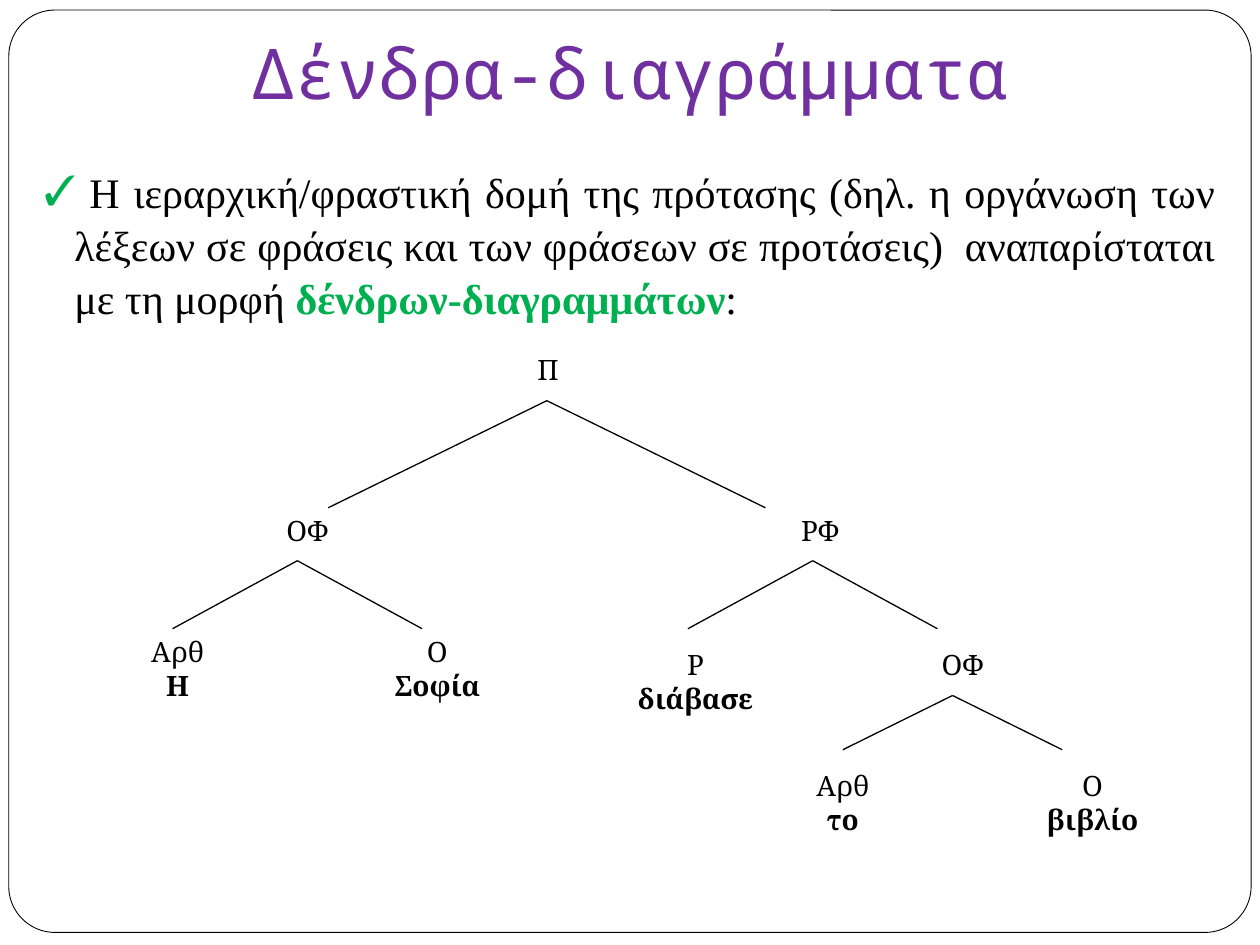
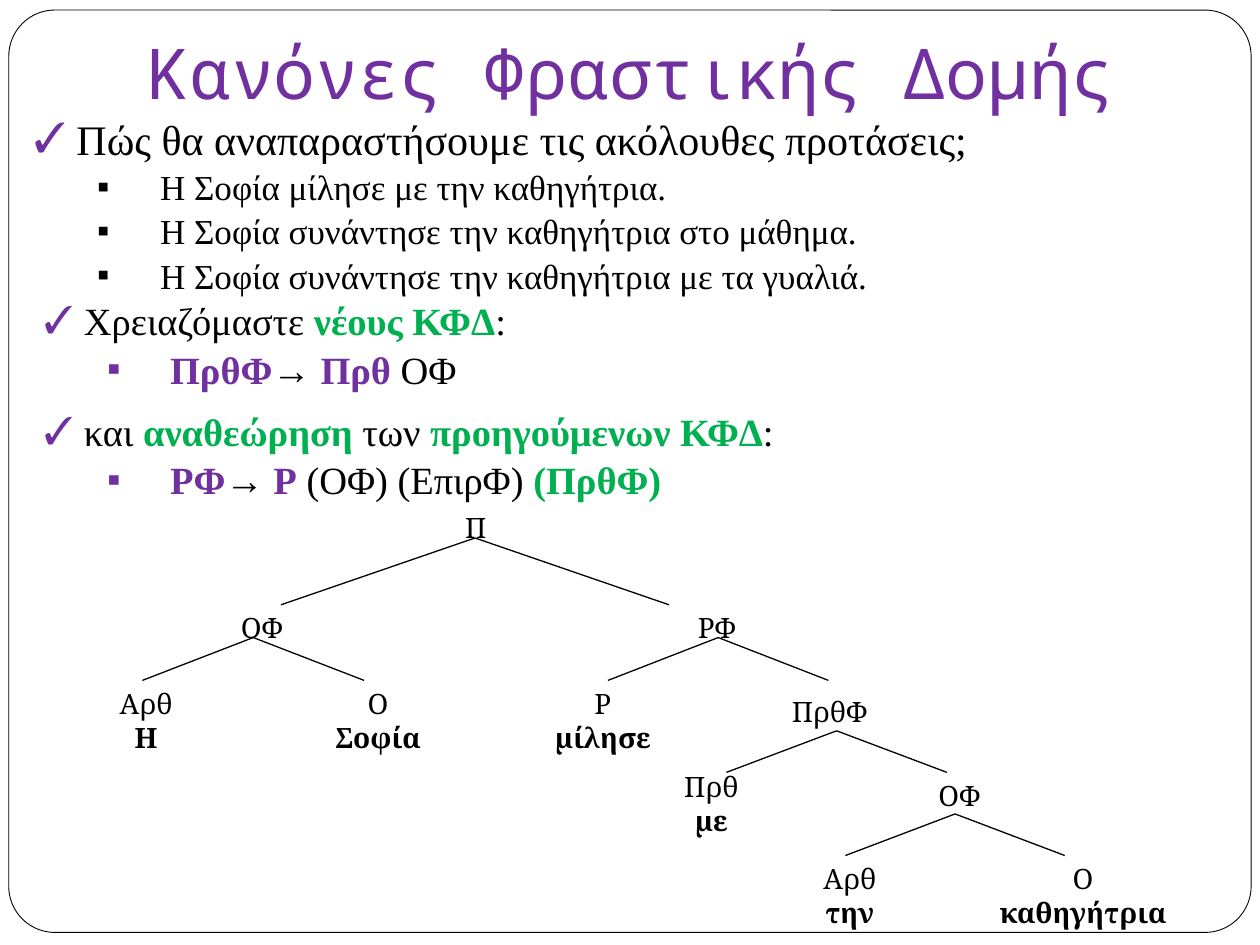
from dataclasses import dataclass

from lxml import etree
from pptx import Presentation
from pptx import util as u
from pptx.dml.color import RGBColor
from pptx.enum import shapes, text
from pptx.oxml import ns


@dataclass(frozen=True)
class Theme:
    black: str = "000000"
    white: str = "FFFFFF"
    purple: str = "7030A0"
    green: str = "00B050"
    title_font: str = "Noto Sans Mono"
    body_font: str = "Times New Roman"
    lead_font: str = "Lato"
    tree_font: str = "Cambria"
    title_size: int = 40
    large: int = 24
    medium: int = 22
    small: int = 20
    tree_size: int = 16
    frame_line: float = 0.5
    branch_line: float = 0.75
    spacing: float = 1.05


T = Theme()
COLS, ROWS = 100, 75
PLAIN = {"color": T.black, "bold": False}
KEY = {"color": T.green, "bold": True}
HEAD = {"color": T.purple, "bold": True}

prs = Presentation()
prs.slide_width, prs.slide_height = u.Inches(10), u.Inches(7.5)


def col(n):
    return int(prs.slide_width * n / COLS)


def row(n):
    return int(prs.slide_height * n / ROWS)


def place(sp, box):
    x, y, w, h = box
    values = {"left": col(x), "top": row(y), "width": col(w), "height": row(h)}
    for name, value in values.items():
        setattr(sp, name, value)


def add_run(p, words, font, size, color=T.black, bold=False):
    r = p.add_run()
    r.text = words
    for name, value in {"name": font, "size": u.Pt(size), "bold": bold}.items():
        setattr(r.font, name, value)
    r.font.color.rgb = RGBColor.from_string(color)


def set_frame(tf, **extra):
    values = {"word_wrap": True, "auto_size": text.MSO_AUTO_SIZE.NONE,
              "vertical_anchor": text.MSO_ANCHOR.TOP,
              "margin_left": u.Inches(0.1), "margin_right": u.Inches(0.1),
              "margin_top": u.Inches(0.05), "margin_bottom": u.Inches(0.05)}
    for name, value in {**values, **extra}.items():
        setattr(tf, name, value)


def add_bullet(p, char, color, margin, hang):
    pPr = p._p.get_or_add_pPr()
    pPr.set("marL", str(u.Inches(margin)))
    pPr.set("indent", str(-u.Inches(hang)))
    clr = etree.SubElement(pPr, ns.qn("a:buClr"))
    etree.SubElement(clr, ns.qn("a:srgbClr")).set("val", color)
    etree.SubElement(pPr, ns.qn("a:buFont")).set("typeface", T.body_font)
    etree.SubElement(pPr, ns.qn("a:buChar")).set("char", char)


def add_frame(s):
    sp = s.shapes.add_shape(shapes.MSO_SHAPE.ROUNDED_RECTANGLE, 0, 0, 0, 0)
    place(sp, (0.7, 0.8, 98.6, 73.2))
    sp.adjustments[0] = 0.05
    sp.shadow.inherit = False
    sp.fill.solid()
    sp.fill.fore_color.rgb = RGBColor.from_string(T.white)
    sp.line.color.rgb = RGBColor.from_string(T.black)
    sp.line.width = u.Pt(T.frame_line)
    prs.slide_master.shapes.element.insert(2, sp._element)


def add_title(s, words):
    sp = s.shapes.title
    place(sp, (7.5, -2.5, 85, 12.5))
    set_frame(sp.text_frame, vertical_anchor=text.MSO_ANCHOR.BOTTOM,
              margin_bottom=u.Inches(0.1))
    p = sp.text_frame.paragraphs[0]
    p.alignment = text.PP_ALIGN.CENTER
    add_run(p, words, T.title_font, T.title_size, T.purple)


def add_list(sp, box, items, lead, size, sub_size, align):
    place(sp, box)
    tf = sp.text_frame
    set_frame(tf)
    for i, (level, bullet_color, runs) in enumerate(items):
        p = tf.add_paragraph() if i else tf.paragraphs[0]
        if level:
            add_bullet(p, "▪", bullet_color, 1, 0.5)
        else:
            add_bullet(p, "✓", bullet_color, 0.24, 0.24)
            add_run(p, " ", size=size, color=bullet_color, **lead)
        values = {"level": level, "alignment": align, "line_spacing": T.spacing,
                  "space_before": u.Pt(0), "space_after": u.Pt(0)}
        for name, value in values.items():
            setattr(p, name, value)
        for words, style in runs:
            add_run(p, words, T.body_font, sub_size if level else size, **style)


def add_label(s, box, lines):
    sp = s.shapes.add_textbox(0, 0, 0, 0)
    place(sp, box)
    set_frame(sp.text_frame, auto_size=text.MSO_AUTO_SIZE.SHAPE_TO_FIT_TEXT)
    for i, words in enumerate(lines):
        p = sp.text_frame.add_paragraph() if i else sp.text_frame.paragraphs[0]
        p.alignment = text.PP_ALIGN.CENTER
        add_run(p, words, T.tree_font, T.tree_size, bold=i > 0)


def add_fork(s, x, y, half, drop):
    for side in (-1, 1):
        c = s.shapes.add_connector(shapes.MSO_CONNECTOR.STRAIGHT, col(x + side * half),
                                   row(y + drop), col(x), row(y))
        c.line.color.rgb = RGBColor.from_string(T.black)
        c.line.width = u.Pt(T.branch_line)
        etree.SubElement(c._element.spPr, ns.qn("a:effectLst"))


def add_tree(s, origin, forks, labels):
    left, top = origin
    for x, y, half, drop in forks:
        add_fork(s, left + x, top + y, half, drop)
    for x, y, w, h, *lines in labels:
        add_label(s, (left + x, top + y, w, h), lines)


def add_slide(layout, title, lists, tree):
    s = prs.slides.add_slide(prs.slide_layouts[layout])
    add_title(s, title)
    bodies = [sp for sp in s.placeholders if sp.placeholder_format.idx]
    for sp, spec in zip(bodies, lists):
        add_list(sp, **spec)
    for sp in bodies[len(lists):]:
        sp._element.getparent().remove(sp._element)
    add_tree(s, **tree)
    return s


JUSTIFY, LEFT = text.PP_ALIGN.JUSTIFY, text.PP_ALIGN.LEFT
RULES = {"lead": {"font": T.body_font}, "size": T.medium, "sub_size": T.medium,
         "align": LEFT}
QUESTION = {"lead": {"font": T.lead_font}, "size": T.large, "sub_size": T.small,
            "align": JUSTIFY}

TREE_LISTS = [
    {"box": (2.5, 12.5, 95, 17.2), **QUESTION, "items": [
        (0, T.green, [
            ("Η ιεραρχική/φραστική δομή της πρότασης (δηλ. η οργάνωση των λέξεων σε "
             "φράσεις και των φράσεων σε προτάσεις)  αναπαρίσταται με τη μορφή ", PLAIN),
            ("δένδρων-διαγραμμάτων", KEY), (":", PLAIN)])]},
]
READ_TREE = {
    "origin": (6.7, 27.5),
    "forks": [(36.7, 4.3, 17.35, 8.5), (16.9, 17, 9.9, 5.4),
              (57.8, 17, 9.9, 5.4), (68.9, 27.7, 8.7, 4.3)],
    "labels": [
        (33, 0, 7.6, 5, "Π"),
        (13.2, 12.8, 9, 5, "ΟΦ"),
        (53.9, 12.8, 9, 5, "ΡΦ"),
        (0, 22.4, 14.8, 6.4, "Αρθ", "Η"),
        (20.6, 22.4, 14.8, 8.6, "Ο", "Σοφία"),
        (39.2, 23.4, 18.6, 8.6, "Ρ", "διάβασε"),
        (64.5, 23.4, 10.4, 5, "ΟΦ"),
        (52.8, 33, 14.8, 6.4, "Αρθ", "το"),
        (72.6, 33, 14.8, 8.6, "Ο", "βιβλίο"),
    ],
}

EXAMPLES = ["Η Σοφία μίλησε με την καθηγήτρια.",
            "Η Σοφία συνάντησε την καθηγήτρια στο μάθημα.",
            "Η Σοφία συνάντησε την καθηγήτρια με τα γυαλιά."]
RULE_LISTS = [
    {"box": (1.7, 8.3, 98.3, 15.1), **QUESTION, "items": [
        (0, T.purple, [("Πώς θα αναπαραστήσουμε τις ακόλουθες προτάσεις;", PLAIN)]),
        *[(1, T.black, [(words, PLAIN)]) for words in EXAMPLES]]},
    {"box": (2.5, 22.9, 97.5, 8.4), **RULES, "items": [
        (0, T.purple, [("Χρειαζόμαστε ", PLAIN), ("νέους ΚΦΔ", KEY), (":", PLAIN)]),
        (1, T.purple, [("ΠρθΦ", HEAD), ("→ ", PLAIN), ("Πρθ", HEAD), (" ΟΦ", PLAIN)])]},
    {"box": (2.5, 31.7, 92.5, 8.4), **RULES, "items": [
        (0, T.purple, [("και ", PLAIN), ("αναθεώρηση", KEY), (" των ", PLAIN),
                       ("προηγούμενων ΚΦΔ", KEY), (":", PLAIN)]),
        (1, T.purple, [("ΡΦ", HEAD), ("→ ", PLAIN), ("Ρ", HEAD),
                       (" (ΟΦ) (ΕπιρΦ) ", PLAIN), ("(ΠρθΦ)", KEY)])]},
]
TALK_TREE = {
    "origin": (5, 40),
    "forks": [(32.7, 2.7, 15.4, 5.3), (15.1, 10.6, 8.8, 3.4), (52, 10.6, 8.75, 3.4),
              (61.4, 18, 8.75, 3.3), (70.8, 24.6, 8.7, 3.3)],
    "labels": [
        (29.4, 0, 6.7, 3.1, "Π"),
        (11.8, 8, 8, 3.1, "ΟΦ"),
        (47.9, 8, 8, 3.1, "ΡΦ"),
        (0, 14, 13.2, 6.4, "Αρθ", "Η"),
        (18.4, 14, 13.2, 5.4, "Ο", "Σοφία"),
        (34.6, 14, 16.5, 5.4, "Ρ", "μίλησε"),
        (52.6, 14.6, 16.5, 3.7, "ΠρθΦ"),
        (43.2, 20.6, 16.5, 6.4, "Πρθ", "με"),
        (62.9, 21.3, 16.5, 5.4, "ΟΦ"),
        (54.2, 27.9, 16.5, 6.4, "Αρθ", "την"),
        (72.7, 27.9, 16.5, 5.4, "Ο", "καθηγήτρια"),
    ],
}


def main():
    s = add_slide(1, "Δένδρα-διαγράμματα", TREE_LISTS, READ_TREE)
    add_frame(s)
    add_slide(4, "Κανόνες Φραστικής Δομής", RULE_LISTS, TALK_TREE)
    prs.save("out.pptx")


if __name__ == "__main__":
    main()
